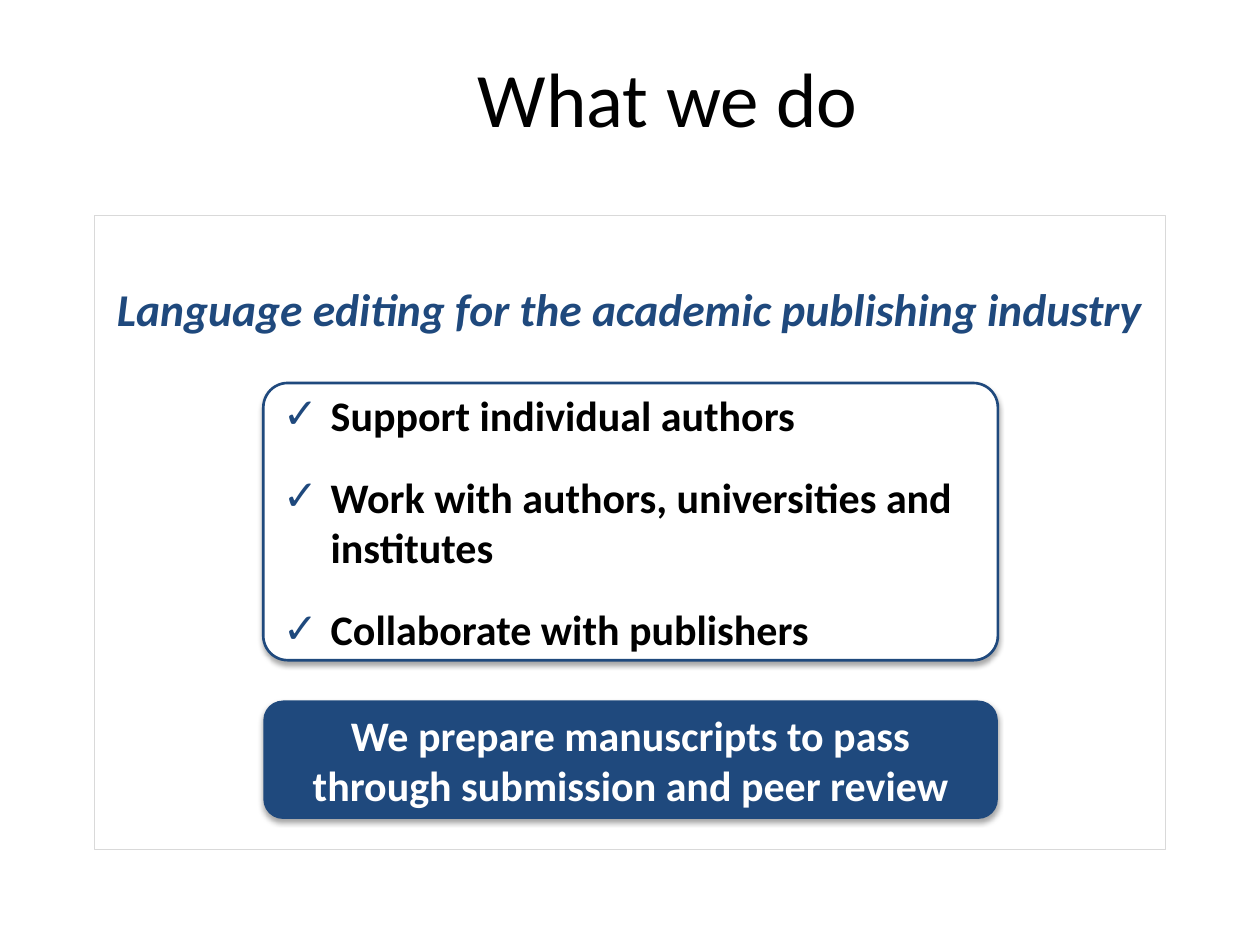
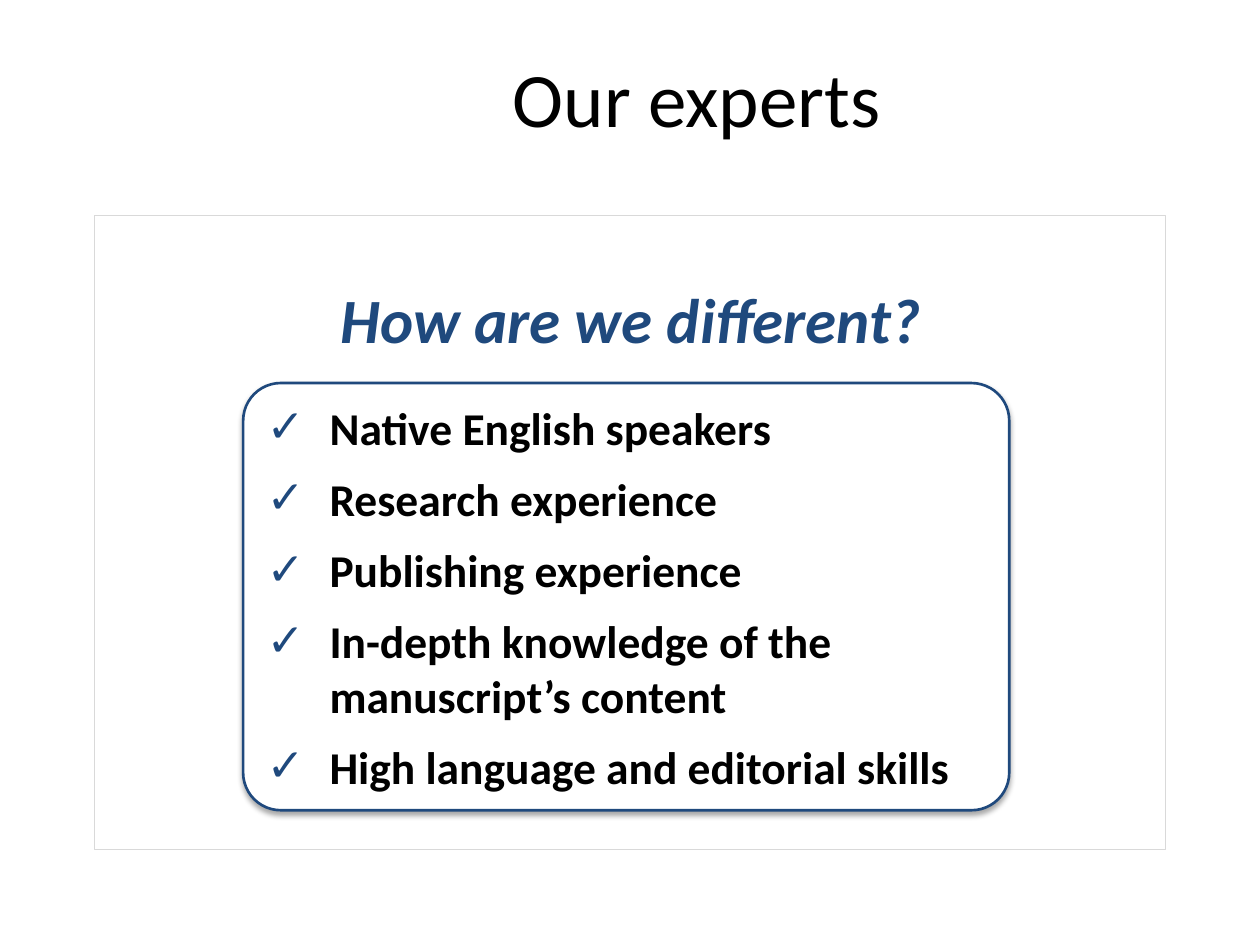
from dataclasses import dataclass
from lxml.etree import SubElement
from pptx import Presentation
from pptx.dml.color import RGBColor as RGB
from pptx.enum.shapes import MSO_SHAPE as Kind
from pptx.enum.text import MSO_ANCHOR as Anchor, PP_ALIGN as Align
from pptx.oxml.ns import qn
from pptx.util import Inches, Pt


@dataclass(frozen=True)
class Theme:
    font: str = "Calibri"
    navy: RGB = RGB(0x1F, 0x49, 0x7D)
    black: RGB = RGB(0, 0, 0)
    white: RGB = RGB(255, 255, 255)
    grey: RGB = RGB(0xD9, 0xD9, 0xD9)
    title: int = 44
    head: int = 36
    large: int = 26
    text: int = 24


def add(parent, tag, **attrs):
    return SubElement(parent, qn(tag), {k: str(v) for k, v in attrs.items()})


class Deck:
    def __init__(self, theme):
        self.theme = theme
        self.prs = Presentation()
        self.prs.slide_width, self.prs.slide_height = Inches(10), Inches(7.5)
        self.slide = None

    def page(self, title, left):
        """Start a slide with its framed panel and title."""
        self.slide = self.prs.slides.add_slide(self.prs.slide_layouts[5])
        head = self.slide.shapes.title
        head.left, head.top = Inches(left), Inches(0.3)
        head.width, head.height = Inches(6.42), Inches(0.93)
        head.text_frame.vertical_anchor = Anchor.MIDDLE
        self.label(head.text_frame, [title], self.theme.title,
                   self.theme.black, Align.CENTER, bold=False)
        panel = self.shape(Kind.RECTANGLE, (0.75, 1.71, 8.5, 5.03),
                           self.theme.white, self.theme.grey, 0.25)
        fill = panel._element.spPr.find(qn("a:solidFill"))
        add(fill[0], "a:alpha", val=80000)

    def label(self, frame, lines, size, color, align, bold=True):
        """Fill a text frame with one paragraph per line, all in one style."""
        frame.word_wrap = True
        frame.text = "\n".join(lines)
        for para in frame.paragraphs:
            para.alignment = align
            font = para.font
            font.name, font.size, font.bold = self.theme.font, Pt(size), bold
            font.color.rgb = color

    def shape(self, kind, box, fill, line=None, width=1.5):
        item = self.slide.shapes.add_shape(kind, *map(Inches, box))
        item.shadow.inherit = False
        item.fill.solid()
        item.fill.fore_color.rgb = fill
        if line is None:
            item.line.fill.background()
        else:
            item.line.color.rgb = line
            item.line.width = Pt(width)
        return item

    def card(self, box, fill, line=None):
        """Add a rounded box with a soft shadow below it."""
        item = self.shape(Kind.ROUNDED_RECTANGLE, box, fill, line)
        item.text_frame.vertical_anchor = Anchor.MIDDLE
        effects = item._element.spPr.find(qn("a:effectLst"))
        shade = add(effects, "a:outerShdw", blurRad=Pt(3.1), dist=Pt(1.8),
                    dir=5400000, rotWithShape=0)
        add(add(shade, "a:srgbClr", val="000000"), "a:alpha", val=35000)
        return item

    def motto(self, text, box, size):
        item = self.slide.shapes.add_textbox(*map(Inches, box))
        self.label(item.text_frame, [text], size, self.theme.navy, Align.CENTER)
        item.text_frame.paragraphs[0].font.italic = True

    def checks(self, lines, box, size, indent, gap):
        """Add a card holding a list with tick bullets."""
        item = self.card(box, self.theme.white, self.theme.navy)
        item.adjustments[0] = 0.088
        self.label(item.text_frame, lines, size, self.theme.black, Align.LEFT)
        for i, para in enumerate(item.text_frame.paragraphs):
            para.space_before = Pt(gap if i else 0)
            props = para._p.get_or_add_pPr()
            props.set("marL", str(Inches(indent)))
            props.set("indent", str(-Inches(indent)))
            tint = add(props, "a:buClr")
            add(tint, "a:srgbClr", val=self.theme.navy)
            mark = add(props, "a:buFont", typeface="Arial")
            char = add(props, "a:buChar", char="✓")
            props.find(qn("a:defRPr")).addprevious(tint)
            tint.addnext(mark)
            mark.addnext(char)

    def banner(self, text, box):
        item = self.card(box, self.theme.navy)
        self.label(item.text_frame, [text], self.theme.text,
                   self.theme.white, Align.CENTER)


def main():
    theme = Theme()
    deck = Deck(theme)

    deck.page("What we do", 2.09)
    deck.motto("Language editing for the academic publishing industry",
               (0.75, 2.18, 8.5, 0.54), theme.large)
    deck.checks(["Support individual authors",
                 "Work with authors, universities and institutes",
                 "Collaborate with publishers"],
                (2.09, 3.04, 5.83, 2.2), theme.text, indent=0.38, gap=18)
    deck.banner("We prepare manuscripts to pass through submission and peer review",
                (2.09, 5.56, 5.83, 0.94))

    deck.page("Our experts", 2.32)
    deck.motto("How are we different?", (1.41, 2.18, 7.19, 0.71), theme.head)
    deck.checks(["Native English speakers",
                 "Research experience",
                 "Publishing experience",
                 "In-depth knowledge of the manuscript’s content",
                 "High language and editorial skills"],
                (1.93, 3.04, 6.08, 3.39), theme.large, indent=0.5, gap=9.5)

    deck.prs.save("out.pptx")


if __name__ == "__main__":
    main()
